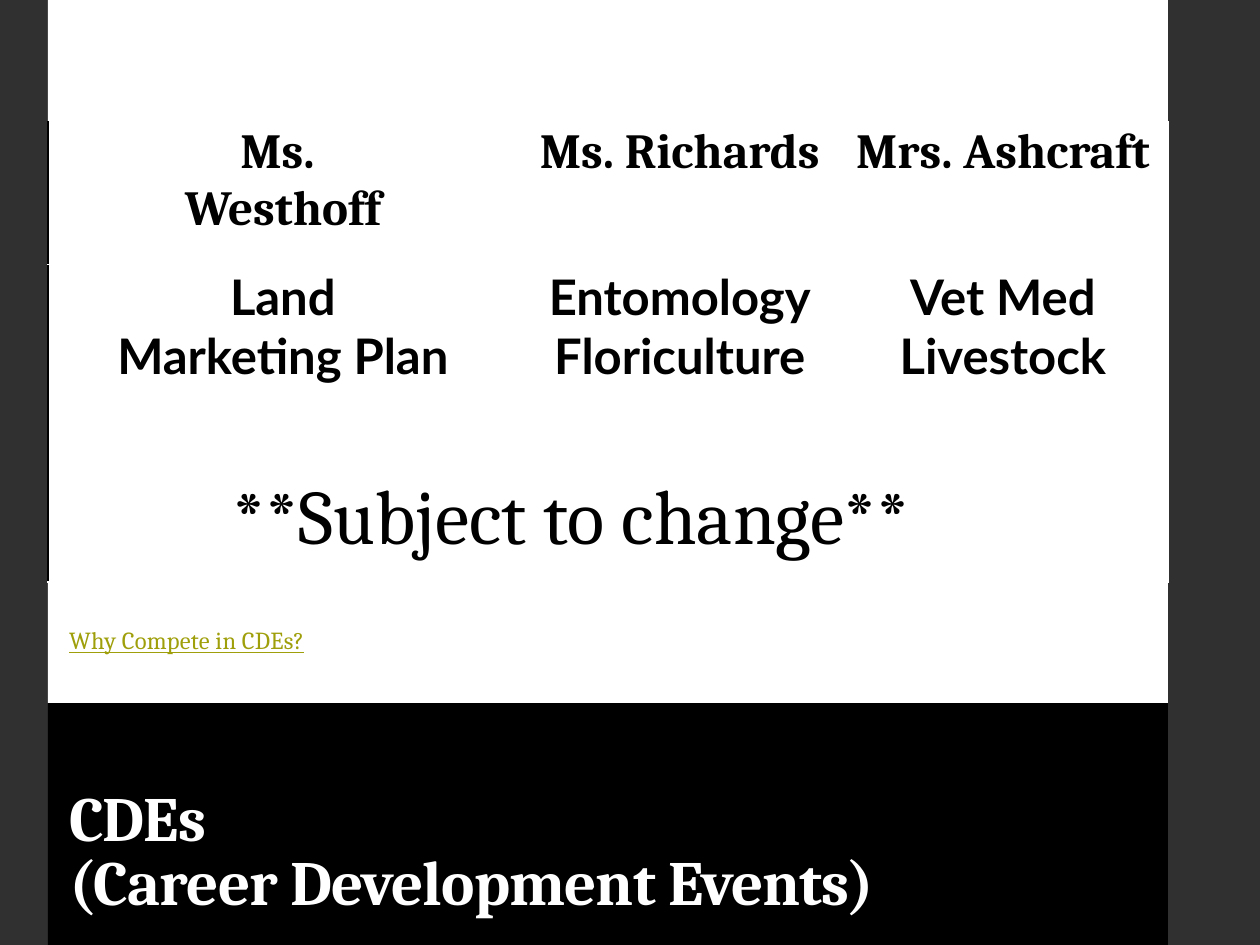
from typing import NamedTuple

from lxml import etree
from pptx import Presentation
from pptx.dml.color import RGBColor
from pptx.enum.shapes import MSO_SHAPE
from pptx.enum.text import MSO_ANCHOR, PP_ALIGN
from pptx.oxml.ns import qn
from pptx.util import Inches, Pt

RECTANGLE = MSO_SHAPE.RECTANGLE
TOP, BOTTOM = MSO_ANCHOR.TOP, MSO_ANCHOR.BOTTOM
LEFT, CENTER = PP_ALIGN.LEFT, PP_ALIGN.CENTER
COLORS = {"black": "000000", "white": "FFFFFF", "side": "303030", "link": "9F9F0B"}


class Box(NamedTuple):
    left: float
    top: float
    width: float
    height: float

    def lengths(self):
        return [Inches(value) for value in self]


class Panel(NamedTuple):
    box: Box
    color: str


class Advisor(NamedTuple):
    name: str
    events: str
    column_width: float


PANELS = [
    Panel(Box(9.21, 0, 0.79, 7.5), "side"),
    Panel(Box(0, 0, 0.38, 7.5), "side"),
    Panel(Box(0.38, 0, 8.89, 5.58), "white"),
    Panel(Box(0.38, 5.58, 8.89, 1.92), "black"),
]
ADVISORS = [
    Advisor("Ms. \nWesthoff", "Land\nMarketing Plan", 3.76),
    Advisor("Ms. Richards", "Entomology\nFloriculture", 2.54),
    Advisor("Mrs. Ashcraft", "Vet Med\nLivestock", 2.59),
]
ROW_HEIGHTS = [1.13, 2.52]


def rgb(name: str) -> RGBColor:
    return RGBColor.from_string(COLORS[name])


def write_text(frame, text: str, *, size: float, font="Cambria", color="black", bold=False,
               underline=False, align=LEFT, line_spacing=1.0, letter_spacing=0.0) -> None:
    """Fill a text frame; \\n starts a paragraph and \\v breaks a line."""
    frame.text = text
    for paragraph in frame.paragraphs:
        paragraph.alignment = align
        paragraph.line_spacing = line_spacing
        for run in paragraph.runs:
            run.font.name = font
            run.font.size = Pt(size)
            run.font.bold = bold
            run.font.underline = underline
            run.font.color.rgb = rgb(color)
            if letter_spacing:
                run.font._element.set("spc", str(round(letter_spacing * 100)))


def add_panel(slide, panel: Panel) -> None:
    shape = slide.shapes.add_shape(RECTANGLE, *panel.box.lengths())
    shape.shadow.inherit = False
    shape.fill.solid()
    shape.fill.fore_color.rgb = rgb(panel.color)
    shape.line.fill.background()


def add_text(slide, box: Box, text: str, *, anchor=TOP, **text_format) -> None:
    frame = slide.shapes.add_textbox(*box.lengths()).text_frame
    frame.word_wrap = True
    frame.vertical_anchor = anchor
    write_text(frame, text, **text_format)


def add_left_border(cell, color: str) -> None:
    border = etree.Element(qn("a:lnL"), w=str(Pt(1)))
    fill = etree.SubElement(border, qn("a:solidFill"))
    etree.SubElement(fill, qn("a:srgbClr"), val=COLORS[color])
    cell._tc.get_or_add_tcPr().insert(0, border)


def fill_cell(cell, text: str, font: str) -> None:
    cell.margin_left, cell.margin_top = Inches(0.07), Inches(0.02)
    cell.margin_right, cell.margin_bottom = Inches(0.1), Inches(0.14)
    cell.fill.solid()
    cell.fill.fore_color.rgb = rgb("white")
    write_text(cell.text_frame, text, size=28, font=font, bold=True, align=CENTER)


def add_advisor_table(slide, box: Box) -> None:
    table = slide.shapes.add_table(len(ROW_HEIGHTS), len(ADVISORS), *box.lengths()).table
    table.first_row = table.horz_banding = False
    for row, height in zip(table.rows, ROW_HEIGHTS):
        row.height = Inches(height)
    for index, advisor in enumerate(ADVISORS):
        table.columns[index].width = Inches(advisor.column_width)
        fill_cell(table.cell(0, index), advisor.name, "Cambria")
        fill_cell(table.cell(1, index), advisor.events, "Lato")
    for row_index in range(len(ROW_HEIGHTS)):
        add_left_border(table.cell(row_index, 0), "black")


def main() -> None:
    presentation = Presentation()
    presentation.slide_width, presentation.slide_height = Inches(10), Inches(7.5)
    slide = presentation.slides.add_slide(presentation.slide_layouts[6])
    slide.background.fill.solid()
    slide.background.fill.fore_color.rgb = rgb("black")

    for panel in PANELS:
        add_panel(slide, panel)
    add_text(slide, Box(0.45, 6.01, 8.62, 1.33), "CDEs \v(Career Development Events)",
             anchor=BOTTOM, size=36, color="white", bold=True,
             line_spacing=0.85, letter_spacing=-0.5)
    add_text(slide, Box(0.45, 4.93, 2.83, 0.59), "Why Compete in CDEs?", size=14,
             color="link", underline=True, line_spacing=0.95, letter_spacing=0.1)
    add_advisor_table(slide, Box(0.38, 0.97, 8.89, 3.65))
    add_text(slide, Box(1.75, 3.66, 6.49, 0.84), "**Subject to change**", size=44)
    presentation.save("out.pptx")


if __name__ == "__main__":
    main()
